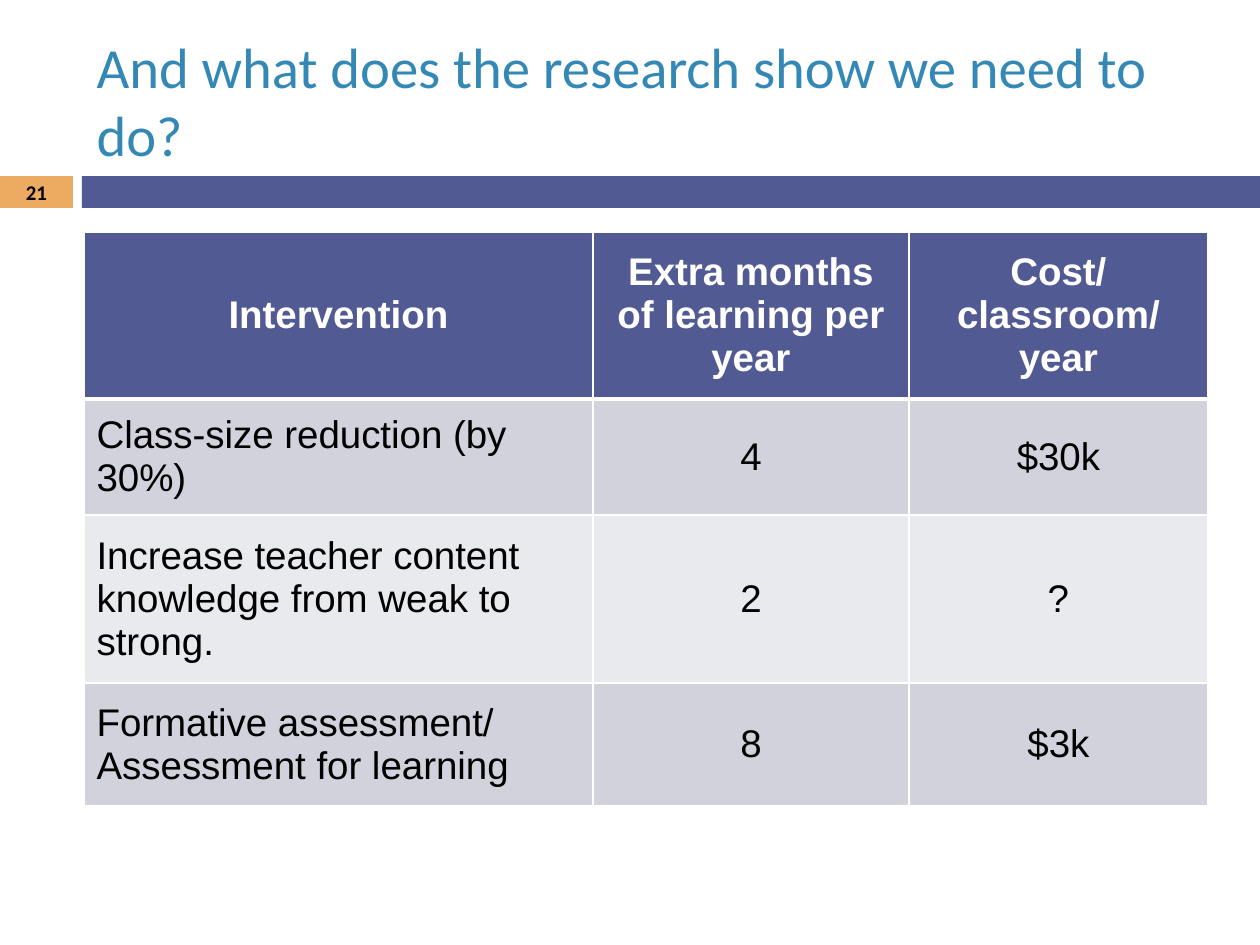
import pptx
import pptx.dml.color
import pptx.enum.shapes
import pptx.enum.text
import pptx.oxml
import pptx.oxml.ns
import pptx.util

EMU_PER_PX = 914400 / 126
INDIGO, ORANGE, BLUE = "525A93", "EDAA61", "3488B6"
WHITE, BLACK = "FFFFFF", "000000"
BANDS = ["D1D2DC", "E9EAEE"]
MIDDLE = pptx.enum.text.MSO_ANCHOR.MIDDLE
CENTER = pptx.enum.text.PP_ALIGN.CENTER
LEFT = pptx.enum.text.PP_ALIGN.LEFT


def px(length):
    return pptx.util.Emu(round(length * EMU_PER_PX))


def color(hex_string):
    return pptx.dml.color.RGBColor.from_string(hex_string)


class SlideBuilder:
    """Holds the style and the current slide."""

    heading_font = "Calibri"
    table_font = "Arial"
    table_size = 22

    def __init__(self, slide):
        self.slide = slide

    def add_text(self, frame, lines, font, size, hex_color, bold=False, align=LEFT):
        frame.word_wrap = True
        frame.vertical_anchor = MIDDLE
        for index, line in enumerate(lines):
            paragraph = frame.add_paragraph() if index else frame.paragraphs[0]
            paragraph.alignment = align
            run = paragraph.add_run()
            run.text = line
            run.font.name = font
            run.font.size = pptx.util.Pt(size)
            run.font.bold = bold
            run.font.color.rgb = color(hex_color)

    def bar(self, left, top, width, height, fill):
        shape = self.slide.shapes.add_shape(
            pptx.enum.shapes.MSO_SHAPE.RECTANGLE,
            px(left), px(top), px(width), px(height))
        shape.shadow.inherit = False
        shape.fill.solid()
        shape.fill.fore_color.rgb = color(fill)
        shape.line.fill.background()

    def title(self, text, left, top, width, height):
        title = self.slide.shapes.title
        title.left, title.top = px(left), px(top)
        title.width, title.height = px(width), px(height)
        self.add_text(title.text_frame, [text], self.heading_font, 32.4, BLUE)
        title.text_frame.auto_size = pptx.enum.text.MSO_AUTO_SIZE.NONE

    def page_number(self, text, left, top, width, height):
        box = self.slide.shapes.add_textbox(px(left), px(top), px(width), px(height))
        frame = box.text_frame
        frame.margin_left = frame.margin_right = 0
        frame.margin_top = frame.margin_bottom = 0
        self.add_text(frame, [text], self.heading_font, 11.9, BLACK, True, CENTER)

    def border(self, cell, side, points):
        properties = cell._tc.get_or_add_tcPr()
        line = pptx.oxml.parse_xml(
            f'<a:{side} {pptx.oxml.ns.nsdecls("a")} w="{pptx.util.Pt(points)}">'
            f'<a:solidFill><a:srgbClr val="{WHITE}"/></a:solidFill></a:{side}>')
        properties.append(line)

    def table(self, rows, left, top, widths, heights):
        table = self.slide.shapes.add_table(
            len(rows), len(widths), px(left), px(top),
            px(sum(widths)), px(sum(heights))).table
        for column, width in zip(table.columns, widths):
            column.width = px(width)
        for row, height in zip(table.rows, heights):
            row.height = px(height)
        for row_index, row in enumerate(rows):
            for column_index, text in enumerate(row):
                header = row_index == 0
                cell = table.cell(row_index, column_index)
                # Borders come before the fill in the cell properties
                for side in ("lnL", "lnR", "lnT", "lnB"):
                    thick = (header and side == "lnB") or (row_index == 1 and side == "lnT")
                    self.border(cell, side, 3 if thick else 1)
                cell.fill.solid()
                cell.fill.fore_color.rgb = color(
                    INDIGO if header else BANDS[(row_index - 1) % 2])
                self.add_text(cell.text_frame, text.split("\n"), self.table_font,
                              self.table_size, WHITE if header else BLACK, header,
                              CENTER if header or column_index else LEFT)
                cell.vertical_anchor = MIDDLE


def main():
    presentation = pptx.Presentation()
    presentation.slide_width = px(1260)
    presentation.slide_height = px(945)
    title_only = presentation.slide_layouts[5]
    builder = SlideBuilder(presentation.slides.add_slide(title_only))

    # Divider band
    builder.bar(0, 176, 73, 32, ORANGE)
    builder.bar(82, 176, 1178, 32, INDIGO)

    # Title and page number
    builder.title("And what does the research show we need to do?", 84, 32, 1163, 136)
    builder.page_number("21", 0, 175, 73, 34)

    # Comparison of interventions
    interventions = [
        ["Intervention", "Extra months of learning per year", "Cost/classroom/year"],
        ["Class-size reduction (by 30%)", "4", "$30k"],
        ["Increase teacher content knowledge from weak to strong.", "2", "?"],
        ["Formative assessment/\nAssessment for learning", "8", "$3k"],
    ]
    builder.table(interventions, 84, 232, [509, 316, 299], [167, 116, 168, 123])

    presentation.save("out.pptx")


if __name__ == "__main__":
    main()
